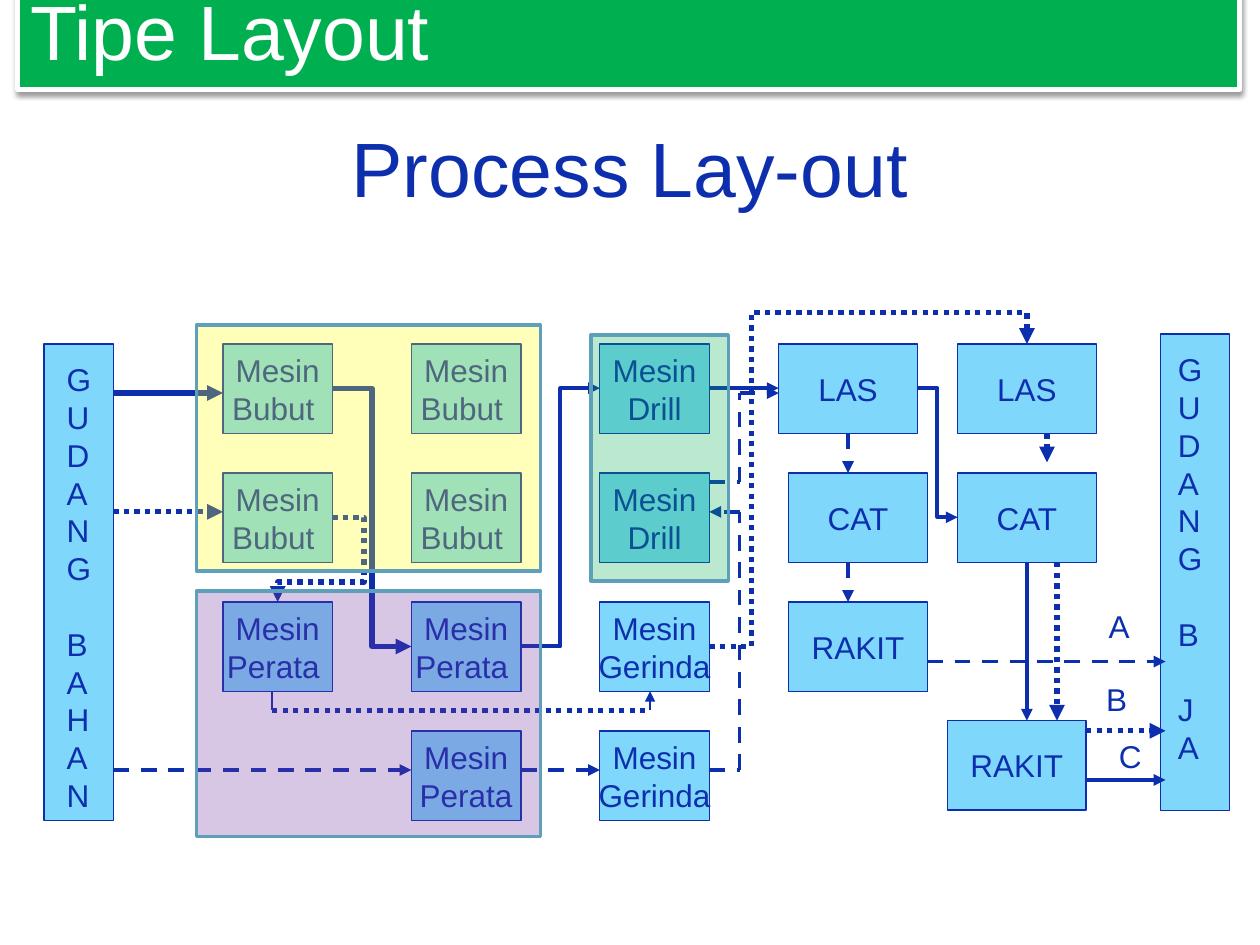
from lxml.etree import SubElement
from pptx import Presentation
from pptx.dml.color import RGBColor
from pptx.enum.dml import MSO_LINE as DASHES
from pptx.enum.shapes import MSO_CONNECTOR as LINK, MSO_SHAPE as FORM
from pptx.enum.text import MSO_ANCHOR as ANCHOR, PP_ALIGN as ALIGN
from pptx.oxml.ns import qn
from pptx.util import Pt

COLORS = {
    "ink": "0E2FAD", "station": "7FD7FC", "zone_edge": "5E9FBA", "white": "FFFFFF",
    "green": "00B050", "yellow": "FFFF00", "purple": "7030A0", "black": "000000",
}


def write(shape, text, size=18, color="ink", align=ALIGN.CENTER,
          anchor=ANCHOR.MIDDLE, wrap=True, pitch=None, gaps=()):
    """Fill the shape with one paragraph per line; gaps lists the paragraphs that
    are set off from the one before by a whole line of the given pitch."""
    frame = shape.text_frame
    frame.text = text
    frame.word_wrap = wrap
    frame.vertical_anchor = anchor
    for index, paragraph in enumerate(frame.paragraphs):
        paragraph.alignment = align
        paragraph.font.size = Pt(size)
        paragraph.font.name = "Arial"
        paragraph.font.color.rgb = RGBColor.from_string(COLORS[color])
        if pitch:
            paragraph.line_spacing = Pt(pitch)
        if index in gaps:
            paragraph.space_before = Pt(pitch)


def block(form, place, fill, edge, weight, opacity=None):
    """Add a filled, outlined shape; opacity is a percentage."""
    shape = slide.shapes.add_shape(form, *map(Pt, place))
    shape.shadow.inherit = False
    shape.fill.solid()
    shape.fill.fore_color.rgb = RGBColor.from_string(COLORS[fill])
    shape.line.color.rgb = RGBColor.from_string(COLORS[edge])
    shape.line.width = Pt(weight)
    if opacity:
        tint = shape.fill._xPr.find(qn("a:solidFill"))[0]
        SubElement(tint, qn("a:alpha"), val=str(opacity * 1000))
    return shape


deck = Presentation()
deck.slide_width, deck.slide_height = Pt(720), Pt(540)
slide = deck.slides.add_slide(deck.slide_layouts[6])

heading = slide.shapes.add_textbox(Pt(36), Pt(50.4), Pt(648), Pt(90))
write(heading, "Process Lay-out", size=44)

# Storage columns at both ends of the floor
STORES = [
    ("GUDANGBAHAN", (6,), (25.2, 196.6, 39.6, 272.2), (31, 202.3, 28.8, 288.7)),
    ("GUDANGBJA", (6, 7), (663.1, 190.8, 39.6, 272.2), (666, 196.6, 36.7, 244.8)),
]
for letters, gaps, column, label in STORES:
    block(FORM.FLOWCHART_PROCESS, column, "station", "ink", 0.75)
    caption = slide.shapes.add_textbox(*map(Pt, label))
    write(caption, "\n".join(letters), align=ALIGN.LEFT, anchor=ANCHOR.TOP,
          pitch=21.6, gaps=gaps)

# Work stations: machines stand on a regular grid, finishing stations do not
ROW_TOP, ROW_STEP = 196.6, 73.7
COLUMN_LEFT, COLUMN_STEP = 127.4, 107.7
MACHINES = [
    ["Bubut ", "Bubut ", "Drill"],
    ["Bubut ", "Bubut ", "Drill"],
    ["Perata ", "Perata ", "Gerinda"],
    [None, "Perata", "Gerinda"],
]
stations = [
    (f"Mesin\n{machine}", COLUMN_LEFT + column * COLUMN_STEP, ROW_TOP + row * ROW_STEP, 62.6)
    for row, machines in enumerate(MACHINES)
    for column, machine in enumerate(machines) if machine
]
FINISHING = [
    ("LAS", 445, 0), ("LAS", 547.2, 0), ("CAT", 450.7, 1), ("CAT", 547.2, 1), ("RAKIT", 450.7, 2),
]
stations += [(task, left, ROW_TOP + row * ROW_STEP, 79.2) for task, left, row in FINISHING]
stations.append(("RAKIT", 541.4, 411.8, 79.2))
for task, left, top, width in stations:
    station = block(FORM.FLOWCHART_PROCESS, (left, top, width, 51), "station", "ink", 0.75)
    write(station, task, wrap=False, pitch=21.6 if "\n" in task else None)

# Flows: start x, y, end x, y, dash, weight, arrowhead, bends
# (bends: None for straight, otherwise the elbow's adjustments in 1/1000 percent)
SOLID, DASH, DOT = None, DASHES.DASH, DASHES.ROUND_DOT
FLOWS = [
    (64.8, 224.6, 127.4, 224.6, SOLID, 3, True, None),
    (64.8, 292.5, 127.4, 292.5, DOT, 3, True, None),
    (64.8, 440, 235.1, 440, DASH, 2.25, True, None),
    (529.9, 378, 666, 378, DASH, 2.25, True, None),
    (620.6, 445.7, 666, 445.7, SOLID, 2.25, True, None),
    (297.7, 440, 342.8, 440, DASH, 2.25, True, None),
    (405.4, 440, 422.6, 440, DASH, 2.25, False, None),
    (422.6, 440, 422.6, 292.5, DASH, 2.25, False, None),
    (422.6, 292.5, 405.4, 292.5, DASH, 2.25, True, None),
    (405.4, 275.6, 422.6, 275.6, DASH, 2.25, False, None),
    (422.6, 275.6, 422.6, 224.6, DASH, 2.25, False, None),
    (422.6, 224.6, 445, 224.6, DASH, 2.25, True, None),
    (484.6, 247.6, 484.6, 270.3, DASH, 2.25, True, None),
    (484.6, 321.3, 484.6, 344, DASH, 2.25, True, None),
    (190, 221.8, 235.1, 369.4, SOLID, 3, True, [50000]),
    (297.7, 369.4, 342.8, 221.8, SOLID, 2.25, True, [50000]),
    (405.4, 221.8, 445, 221.8, SOLID, 2.25, True, None),
    (524.2, 221.8, 547.2, 295.6, SOLID, 2.25, True, [50000]),
    (586.8, 321.3, 586.8, 411.8, SOLID, 2.25, True, None),
    (190, 295.6, 158.7, 344, DOT, 3, True, [-57800, 76400]),
    (155.5, 395, 155.5, 406, SOLID, 0.75, False, None),
    (155.5, 406, 371.5, 406, DOT, 3, False, None),
    (371.5, 406, 371.5, 395, SOLID, 0.75, True, None),
    (405.4, 369.4, 586.8, 196.6, DOT, 3, True, [13200, 110400]),
    (598.3, 247.6, 598.3, 264.2, DOT, 3, True, None),
    (604, 321.3, 604, 411.8, DOT, 3, True, None),
    (620.6, 417.6, 666, 417.6, DOT, 3, True, None),
]
for *ends, dash, weight, arrow, bends in FLOWS:
    flow = slide.shapes.add_connector(LINK.ELBOW if bends else LINK.STRAIGHT, *map(Pt, ends))
    flow.line.color.rgb = RGBColor.from_string(COLORS["ink"])
    flow.line.width = Pt(weight)
    if dash:
        flow.line.dash_style = dash
    if arrow:
        SubElement(flow.line._get_or_add_ln(), qn("a:tailEnd"), type="triangle")
    properties = flow._element.spPr
    SubElement(properties, qn("a:effectLst"))
    if bends:
        geometry = properties.find(qn("a:prstGeom"))
        geometry.set("prst", f"bentConnector{len(bends) + 2}")
        guides = geometry.find(qn("a:avLst"))
        for number, bend in enumerate(bends, 1):
            SubElement(guides, qn("a:gd"), name=f"adj{number}", fmla=f"val {bend}")

for product, left, top in [("A", 626.4, 343.4), ("B", 625, 385.2), ("C", 632.2, 417.6)]:
    tag = slide.shapes.add_textbox(Pt(left), Pt(top), Pt(32), Pt(28.8))
    write(tag, product, align=ALIGN.LEFT, anchor=ANCHOR.TOP, wrap=False)

# Tinted zones over each machine group
ZONES = [
    ((112.3, 185.8, 196.6, 140.4), "yellow"),
    ((337.7, 191.5, 78.5, 140.4), "green"),
    ((112.3, 337.7, 196.6, 140.4), "purple"),
]
for place, tint in ZONES:
    block(FORM.RECTANGLE, place, tint, "zone_edge", 2, opacity=27)

banner = block(FORM.RECTANGLE, (10.1, -16.6, 698.4, 67.7), "green", "white", 3)
write(banner, "Tipe Layout", size=44, color="white", align=ALIGN.LEFT)
shadow = SubElement(banner._element.spPr.find(qn("a:effectLst")), qn("a:outerShdw"),
                    blurRad=str(Pt(3.1)), dist=str(Pt(1.6)), dir="5400000", rotWithShape="0")
shade = SubElement(shadow, qn("a:srgbClr"), val=COLORS["black"])
SubElement(shade, qn("a:alpha"), val="38000")

deck.save("out.pptx")
